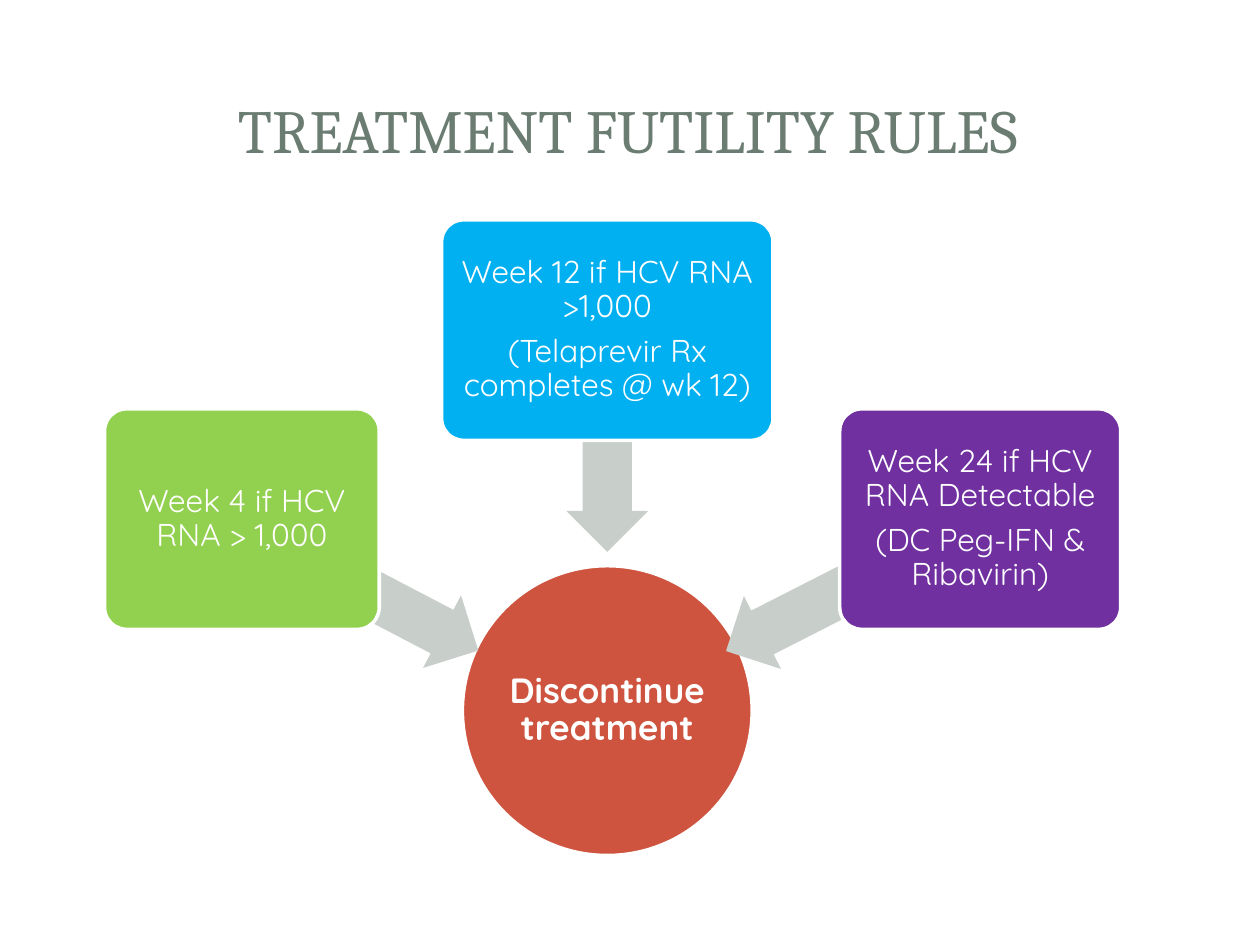
"""Build the treatment futility rules slide: three stopping rules pointing to one outcome."""
import math

import pptx
import pptx.dml.color
import pptx.enum.shapes
import pptx.enum.text
import pptx.util

THEME = {
    "title": "6B7D72", "outcome": "CF543F", "arrow": "C8CECA", "light": "FFFFFF",
    "week 4": "92D050", "week 12": "00B0F0", "week 24": "7030A0",
    "title font": "Cambria", "body font": "Quicksand",
    "title size": 35, "outcome size": 20, "rule size": 18,
}
SHAPES = pptx.enum.shapes.MSO_SHAPE
Inches = pptx.util.Inches


def write(shape, paragraphs, font, size, color, bold=False, inset=0.04, line_spacing=0.9, space_after=0.35):
    """Fill a shape with centred paragraphs; space_after is a share of the type size."""
    frame = shape.text_frame
    frame.text = "\n".join(paragraphs)
    frame.word_wrap = True
    frame.auto_size = pptx.enum.text.MSO_AUTO_SIZE.NONE
    frame.vertical_anchor = pptx.enum.text.MSO_ANCHOR.MIDDLE
    frame.margin_left = frame.margin_right = Inches(inset)
    frame.margin_top = frame.margin_bottom = Inches(inset)
    for paragraph in frame.paragraphs:
        paragraph.alignment = pptx.enum.text.PP_ALIGN.CENTER
        paragraph.line_spacing = line_spacing
        paragraph.space_after = pptx.util.Pt(size * space_after)
        paragraph.font.name = font
        paragraph.font.size = pptx.util.Pt(size)
        paragraph.font.bold = bold
        paragraph.font.color.rgb = pptx.dml.color.RGBColor.from_string(color)


def draw(preset, center_x, center_y, width, height, color, outlined=True):
    """Add a filled preset shape around a centre point."""
    shape = slide.shapes.add_shape(
        preset, Inches(center_x - width / 2), Inches(center_y - height / 2), Inches(width), Inches(height))
    shape.shadow.inherit = False
    shape.fill.solid()
    shape.fill.fore_color.rgb = pptx.dml.color.RGBColor.from_string(color)
    if outlined:
        shape.line.color.rgb = pptx.dml.color.RGBColor.from_string(THEME["light"])
        shape.line.width = pptx.util.Pt(2)
    else:
        shape.line.fill.background()
    return shape


presentation = pptx.Presentation()
presentation.slide_width, presentation.slide_height = Inches(10), Inches(7.5)
slide = presentation.slides.add_slide(presentation.slide_layouts[5])

title = slide.shapes.title
title.left, title.top, title.width, title.height = map(Inches, (0.47, 0.45, 9.03, 1.14))
write(title, ["TREATMENT FUTILITY RULES"], THEME["title font"], THEME["title size"], THEME["title"],
      inset=0.05, line_spacing=1, space_after=0)

outcome_x, outcome_y, outcome_size = 4.82, 5.64, 2.3
outcome = draw(SHAPES.OVAL, outcome_x, outcome_y, outcome_size, outcome_size, THEME["outcome"])
write(outcome, ["Discontinue treatment"], THEME["body font"], THEME["outcome size"], THEME["light"],
      bold=True, inset=0.01)

box_height, arrow_height = 1.75, 0.65
side_y, top_y = 4.12, 2.62
rules = [
    ("week 4", 1.92, side_y, 2.18, ["Week 4 if HCV RNA > 1,000"], (2.91, 4.7, 2, 207.6)),
    ("week 12", outcome_x, top_y, 2.63,
     ["Week 12 if HCV RNA >1,000", "(Telaprevir Rx completes @ wk 12)"], (outcome_x, 3.5, 1.76, 270)),
    ("week 24", 7.78, side_y, 2.23,
     ["Week 24 if HCV RNA Detectable", "(DC Peg-IFN & Ribavirin)"], (6.68, 4.7, 2.06, 333)),
]
for name, center_x, center_y, width, paragraphs, (arrow_x, arrow_y, length, angle) in rules:
    arrow = draw(SHAPES.LEFT_ARROW, arrow_x, arrow_y, length, arrow_height, THEME["arrow"], outlined=False)
    arrow.adjustments[0], arrow.adjustments[1] = 0.6, 0.5
    arrow.rotation = angle
    box = draw(SHAPES.ROUNDED_RECTANGLE, center_x, center_y, width, box_height, THEME[name])
    box.adjustments[0] = 0.1
    write(box, paragraphs, THEME["body font"], THEME["rule size"], THEME["light"])

presentation.save("out.pptx")
